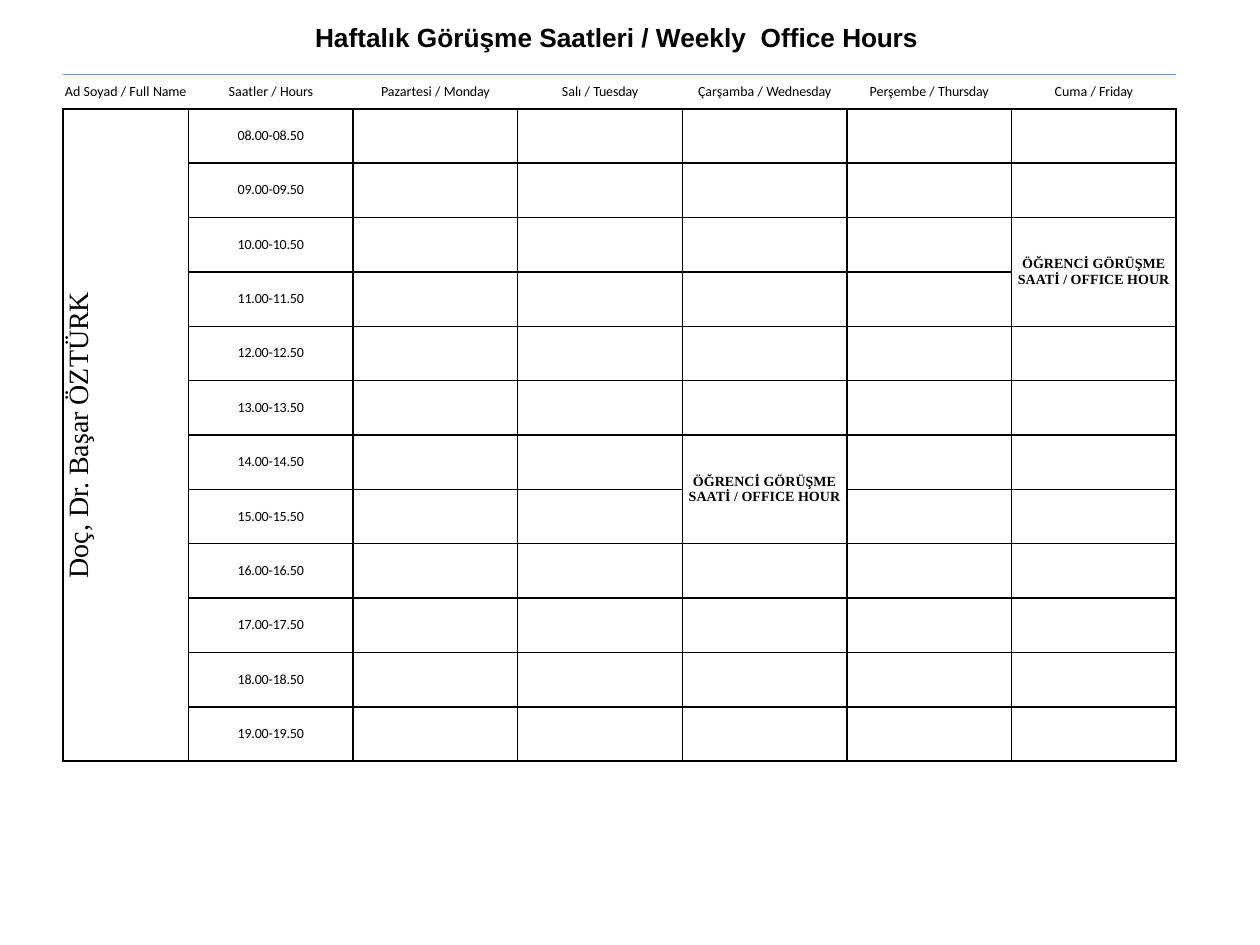
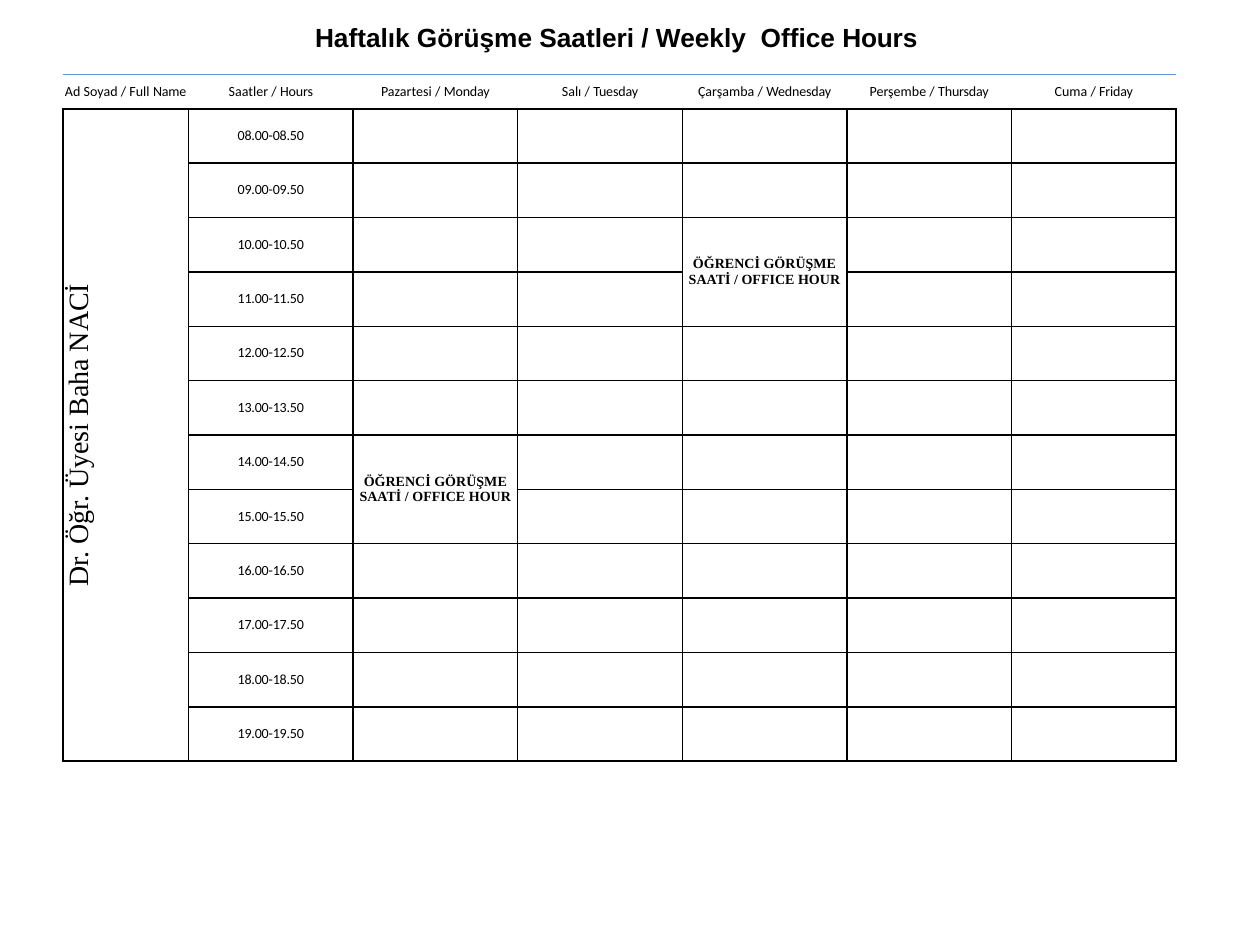
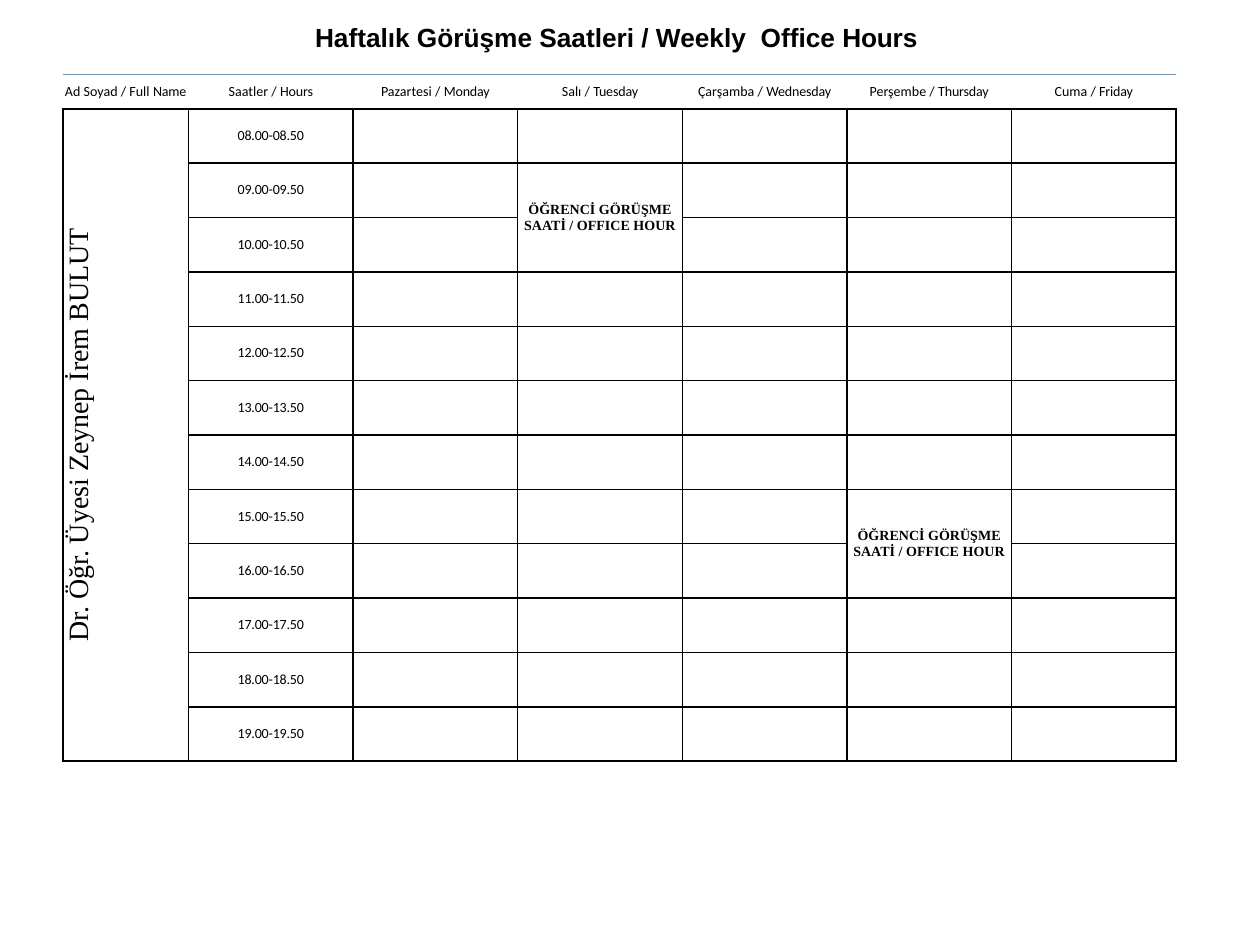
"""Build the weekly office hour grids, one slide for each teacher."""
from dataclasses import dataclass

from lxml.etree import SubElement
from pptx import Presentation
from pptx.dml.color import RGBColor
from pptx.enum.text import MSO_ANCHOR, MSO_AUTO_SIZE, PP_ALIGN
from pptx.oxml.ns import qn
from pptx.slide import Slide
from pptx.table import Table, _Cell
from pptx.text.text import _Paragraph
from pptx.util import Emu, Pt

BLACK = RGBColor(0x00, 0x00, 0x00)
BLUE = RGBColor(0x5B, 0x9B, 0xD4)
SANS, SERIF, HEAD = "Calibri", "Times New Roman", "Arial"
TIGHT = -10

LEFT, TOP = 300, 354
NAME_W, COL_W = 598, 784
HEAD_H, ROW_H = 164, 259
HEAD_PAD, HOUR_PAD = 42, 87

TITLE = [("Haftalık Görüşme Saatleri / Weekly", 0), (" ", 400),
         ("Office ", 0), ("Hours", TIGHT)]
NOTE = "ÖĞRENCİ GÖRÜŞME SAATİ / OFFICE HOUR"
HEADS = [("Ad Soyad / Full ", "Name"), ("Saatler / ", "Hours"),
         ("Pazartesi / ", "Monday"), ("Salı / ", "Tuesday"),
         ("Çarşamba / ", "Wednesday"), ("Perşembe / ", "Thursday"),
         ("Cuma / ", "Friday")]
HOURS = [f"{hour:02}.00-{hour:02}.50" for hour in range(8, 20)]
MON, TUE, WED, THU, FRI = range(2, 7)


@dataclass(frozen=True)
class Slot:
    """A two-hour meeting: its day column and its first hour."""
    day: int
    hour: int


@dataclass(frozen=True)
class Person:
    """A teacher with the weekly meetings."""
    name: str
    slots: tuple[Slot, ...]


STAFF = [
    Person("Doç, Dr. Başar ÖZTÜRK", (Slot(FRI, 10), Slot(WED, 14))),
    Person("Dr. Öğr. Üyesi Baha NACİ", (Slot(WED, 10), Slot(MON, 14))),
    Person("Dr. Öğr. Üyesi Zeynep İrem BULUT", (Slot(TUE, 9), Slot(THU, 15))),
]


def px(size: int) -> Emu:
    """Turn px, 600 to the inch, into EMU."""
    return Emu(size * 1524)


def write(para: _Paragraph, parts: list[tuple[str, int]], face: str,
          size: int, bold: bool = False) -> None:
    """Fill a paragraph with runs of given letter spacing."""
    for text, gap in parts:
        run = para.add_run()
        run.text = text
        if gap:
            run._r.get_or_add_rPr().set("spc", str(gap))
    font = para.font
    font.name, font.size, font.bold = face, Pt(size), bold
    font.color.rgb = BLACK


def fill(cell: _Cell, parts: list[tuple[str, int]], face: str = SANS,
         size: int = 8, bold: bool = False, pad: int = 0) -> None:
    """Write centred text into a cell, below a top inset."""
    cell.margin_top = px(pad)
    para = cell.text_frame.paragraphs[0]
    para.alignment = PP_ALIGN.CENTER
    write(para, parts, face, size, bold)


def edge(cell: _Cell, side: str, color: RGBColor | None) -> None:
    """Draw one cell border, or clear it when there is no colour."""
    line = SubElement(cell._tc.get_or_add_tcPr(), qn(f"a:ln{side}"), w=str(Pt(1)))
    if color is None:
        SubElement(line, qn("a:noFill"))
    else:
        paint = SubElement(line, qn("a:solidFill"))
        SubElement(paint, qn("a:srgbClr"), val=str(color))


def frame(table: Table) -> None:
    """Clear fills and insets, and rule the grid under an open head row."""
    for row, line in enumerate(table.rows):
        for cell in line.cells:
            sides = {"L": BLACK, "R": BLACK, "T": BLACK, "B": BLACK}
            if row == 0:
                sides |= {"L": None, "R": None, "T": BLUE}
            for side, color in sides.items():
                edge(cell, side, color)
            cell.fill.background()
            cell.margin_left = cell.margin_right = 0
            cell.margin_top = cell.margin_bottom = 0
            cell.text_frame.paragraphs[0].font.size = Pt(8)


def add_title(slide: Slide) -> None:
    """Place the shared title."""
    title = slide.shapes.title
    title.left, title.top, title.width, title.height = map(px, (1500, 90, 2922, 162))
    text = title.text_frame
    text.margin_left = text.margin_right = text.margin_bottom = 0
    text.margin_top = px(12)
    text.vertical_anchor = MSO_ANCHOR.TOP
    text.auto_size = MSO_AUTO_SIZE.SHAPE_TO_FIT_TEXT
    para = text.paragraphs[0]
    para.alignment = PP_ALIGN.LEFT
    write(para, TITLE, HEAD, 15, True)


def add_grid(slide: Slide, person: Person) -> None:
    """Draw the week of one teacher."""
    rows, cols = len(HOURS) + 1, len(HEADS)
    wide = NAME_W + COL_W * (cols - 1)
    high = HEAD_H + ROW_H * len(HOURS)
    table = slide.shapes.add_table(
        rows, cols, px(LEFT), px(TOP), px(wide), px(high)).table
    table.first_row = table.horz_banding = False
    for col, line in enumerate(table.columns):
        line.width = px(COL_W if col else NAME_W)
    for row, line in enumerate(table.rows):
        line.height = px(ROW_H if row else HEAD_H)
    frame(table)

    for col, (local, word) in enumerate(HEADS):
        fill(table.cell(0, col), [(local, 0), (word, TIGHT)], pad=HEAD_PAD)
    for row, hour in enumerate(HOURS, 1):
        fill(table.cell(row, 1), [(hour, TIGHT)], pad=HOUR_PAD)

    name = table.cell(1, 0)
    name.merge(table.cell(rows - 1, 0))
    name.vertical_anchor = MSO_ANCHOR.MIDDLE
    name._tc.get_or_add_tcPr().set("vert", "vert270")
    fill(name, [(person.name, 0)], SERIF, 16)
    for slot in person.slots:
        row = slot.hour - 7
        cell = table.cell(row, slot.day)
        cell.merge(table.cell(row + 1, slot.day))
        cell.vertical_anchor = MSO_ANCHOR.MIDDLE
        fill(cell, [(NOTE, 0)], SERIF, 8, True)


def main() -> None:
    """Build and save the slides."""
    deck = Presentation()
    deck.slide_width, deck.slide_height = px(6000), px(4500)
    for person in STAFF:
        slide = deck.slides.add_slide(deck.slide_layouts[5])
        add_grid(slide, person)
        add_title(slide)
    deck.save("out.pptx")


if __name__ == "__main__":
    main()
